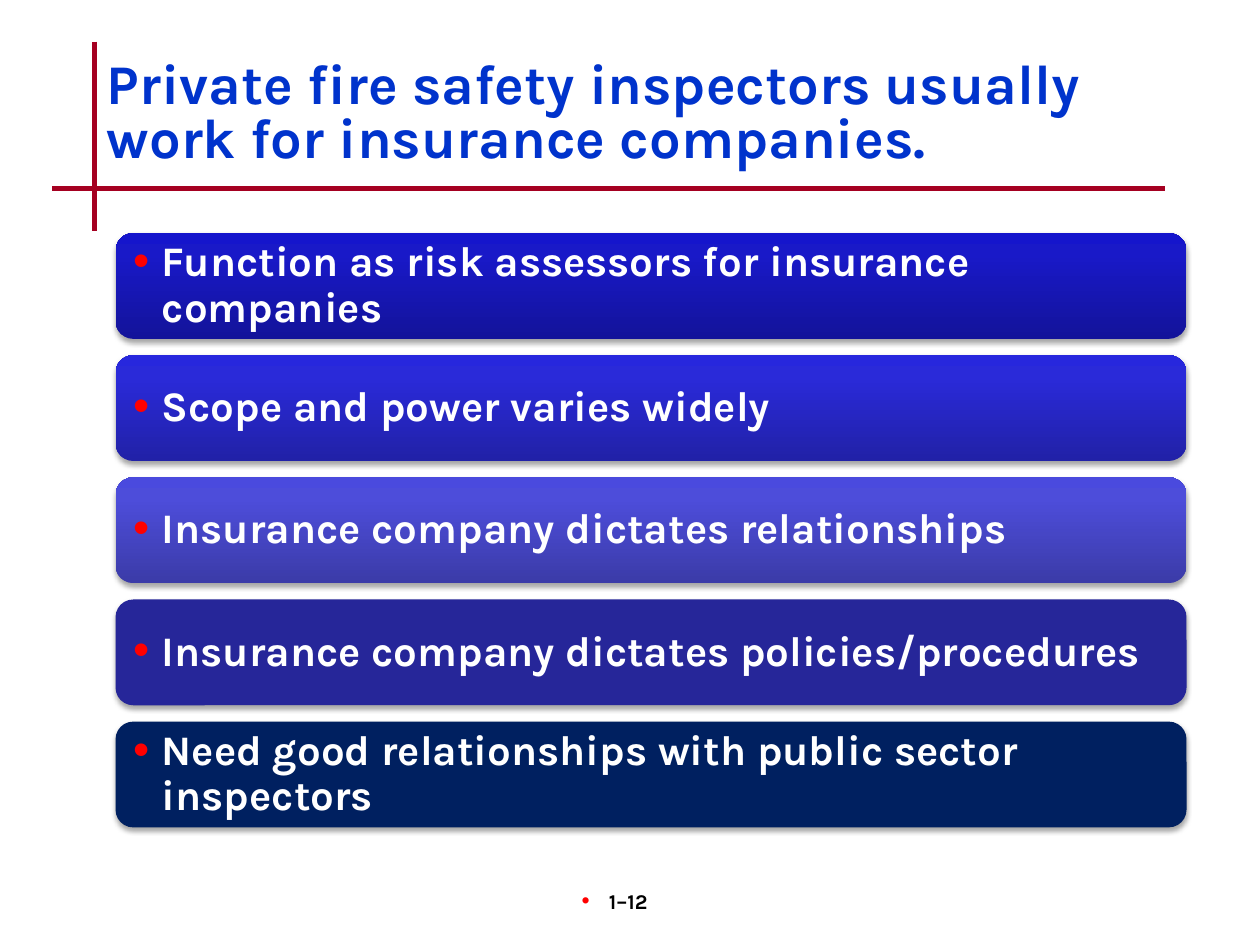
import pptx
import pptx.dml.color
import pptx.enum.shapes
import pptx.enum.text
import pptx.oxml
import pptx.oxml.ns
import pptx.util
from lxml import etree

Cm = pptx.util.Cm
Pt = pptx.util.Pt
qn = pptx.oxml.ns.qn
ANCHOR = pptx.enum.text.MSO_ANCHOR
ALIGN = pptx.enum.text.PP_ALIGN

TITLE = "Private fire safety inspectors usually work for insurance companies."
DUTIES = [
    ("Function as risk assessors for insurance companies", ["13139A", "1919C8", "1515CC"]),
    ("Scope and power varies widely", ["2121A7", "2A2AD9", "2727DD"]),
    ("Insurance company dictates relationships", ["3B3BA8", "4D4DDA", "4A4ADE"]),
    ("Insurance company dictates policies/procedures", ["262699"]),
    ("Need good relationships with public sector inspectors", ["002060"]),
]


def rgb(hex_code):
    """Turn a hex string into a colour."""
    return pptx.dml.color.RGBColor.from_string(hex_code)


def style(paragraph, size, color):
    """Set the bold slide font on a whole paragraph."""
    font = paragraph.font
    font.name, font.size, font.bold = "Karla", Pt(size), True
    font.color.rgb = rgb(color)


def add_bullet(paragraph, hang):
    """Give a paragraph a red hanging bullet."""
    properties = paragraph._p.get_or_add_pPr()
    properties.set("marL", str(hang))
    properties.set("indent", str(-hang))
    bullet_color = etree.SubElement(properties, qn("a:buClr"))
    etree.SubElement(bullet_color, qn("a:srgbClr"), val="FF0000")
    etree.SubElement(properties, qn("a:buSzPct"), val="110000")
    etree.SubElement(properties, qn("a:buFont"), typeface="Arial")
    etree.SubElement(properties, qn("a:buChar"), char="•")


def fill_bar(bar, colors):
    """Fill a bar with one colour or a gradient rising from its foot."""
    if len(colors) == 1:
        bar.fill.solid()
        bar.fill.fore_color.rgb = rgb(colors[0])
        return
    bar.fill.gradient()
    bar.fill.gradient_angle = 90
    stops = bar._element.spPr.find(".//" + qn("a:gsLst"))
    for old_stop in list(stops):
        stops.remove(old_stop)
    for percent, color in zip((0, 80, 100), colors):
        stop = etree.SubElement(stops, qn("a:gs"), pos=str(percent * 1000))
        etree.SubElement(stop, qn("a:srgbClr"), val=color)


def add_shadow(bar):
    """Drop a soft black shadow straight below a bar."""
    bar.shadow.inherit = False
    effects = bar._element.spPr.find(qn("a:effectLst"))
    shadow = etree.SubElement(
        effects, qn("a:outerShdw"), blurRad=str(Pt(3.1)), dist=str(Pt(1.8)),
        dir="5400000", rotWithShape="0")
    black = etree.SubElement(shadow, qn("a:srgbClr"), val="000000")
    etree.SubElement(black, qn("a:alpha"), val="35000")


def add_rule(slide, x1, y1, x2, y2):
    """Draw one red rule of the title cross."""
    rule = slide.shapes.add_connector(
        pptx.enum.shapes.MSO_CONNECTOR.STRAIGHT, x1, y1, x2, y2)
    rule.line.color.rgb = rgb("A50021")
    rule.line.width = Pt(3)
    etree.SubElement(rule._element.spPr, qn("a:effectLst"))


def add_heading(slide, left, top, width, height):
    """Place the title and the two rules crossing at its lower left."""
    cross_y = top + height + Cm(0.2)
    add_rule(slide, left, top - Cm(0.22), left, cross_y + Cm(0.85))
    add_rule(slide, left - Cm(0.85), cross_y, left + width, cross_y)
    title = slide.shapes.title
    title.left, title.top, title.width, title.height = left, top, width, height
    frame = title.text_frame
    frame.text = TITLE
    frame.word_wrap = True
    frame.auto_size = pptx.enum.text.MSO_AUTO_SIZE.NONE
    frame.vertical_anchor = ANCHOR.MIDDLE
    paragraph = frame.paragraphs[0]
    paragraph.alignment = ALIGN.LEFT
    paragraph.line_spacing = 0.8
    style(paragraph, 32, "0033CC")


def add_duties(slide, left, top, width, height):
    """Stack the bulleted bars evenly in the given box."""
    gap = Cm(0.33)
    bar_height = (height - gap * (len(DUTIES) - 1)) // len(DUTIES)
    for row, (duty, colors) in enumerate(DUTIES):
        bar = slide.shapes.add_shape(
            pptx.enum.shapes.MSO_SHAPE.ROUNDED_RECTANGLE,
            left, top + row * (bar_height + gap), width, bar_height)
        fill_bar(bar, colors)
        bar.line.fill.background()
        add_shadow(bar)
        frame = bar.text_frame
        frame.word_wrap = True
        frame.vertical_anchor = ANCHOR.MIDDLE
        frame.margin_left = frame.margin_right = Cm(0.25)
        frame.margin_top = frame.margin_bottom = Cm(0.25)
        paragraph = frame.paragraphs[0]
        paragraph.text = duty
        paragraph.alignment = ALIGN.LEFT
        paragraph.line_spacing = 0.9
        add_bullet(paragraph, Cm(0.58))
        style(paragraph, 24, "FFFFFF")


def add_page_number(slide, left, top, width, height):
    """Place the centred page number with its bullet."""
    frame = slide.shapes.add_textbox(left, top, width, height).text_frame
    frame.word_wrap = True
    frame.margin_right = Cm(0.66)
    paragraph = frame.paragraphs[0]
    paragraph.text = "1–12"
    paragraph.alignment = ALIGN.CENTER
    add_bullet(paragraph, Cm(0.55))
    style(paragraph, 12, "000000")


def main():
    """Build and save the slide."""
    deck = pptx.Presentation()
    deck.slide_width, deck.slide_height = Cm(25.4), Cm(19.05)
    slide = deck.slides.add_slide(deck.slide_layouts[5])
    add_heading(slide, Cm(1.9), Cm(1.06), Cm(21.59), Cm(2.54))
    add_duties(slide, Cm(2.33), Cm(4.7), Cm(21.59), Cm(11.98))
    add_page_number(slide, Cm(9.95), Cm(17.78), Cm(5.29), Cm(1.27))
    deck.save("out.pptx")


if __name__ == "__main__":
    main()
